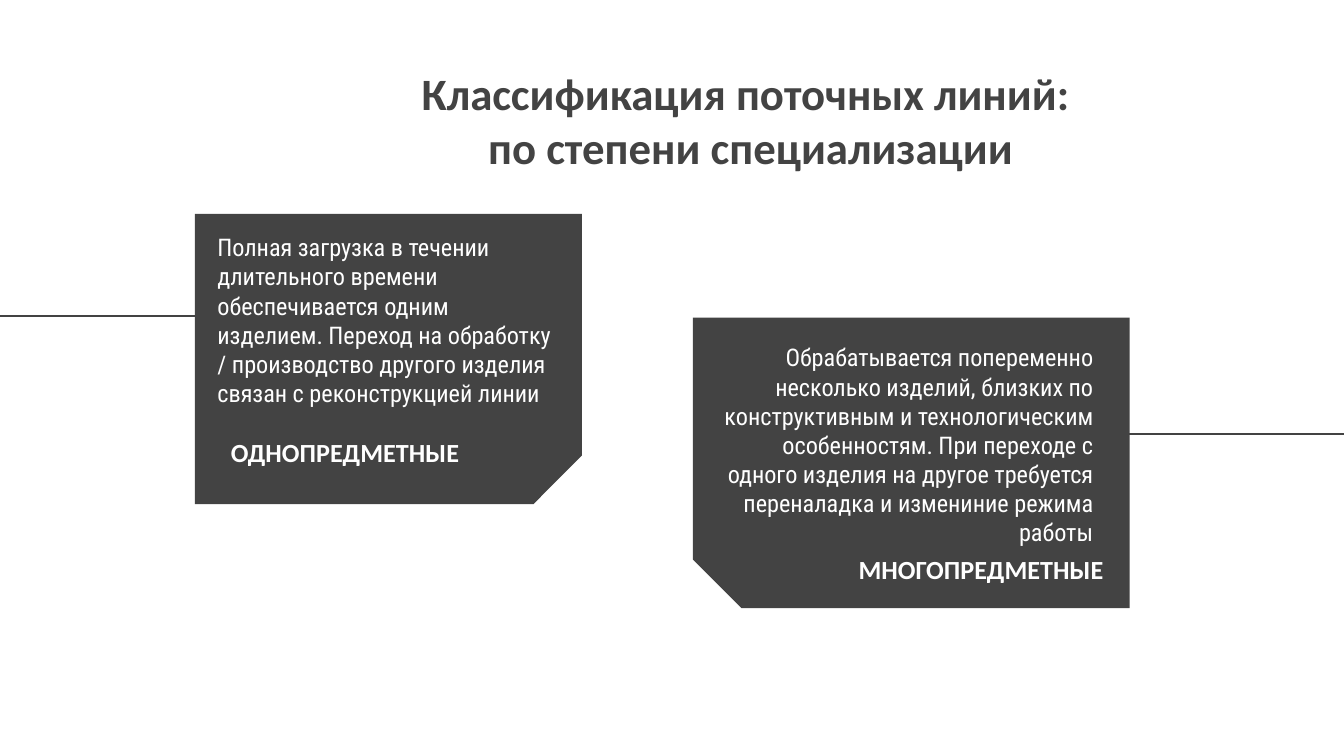
from dataclasses import dataclass

from lxml.etree import SubElement
from pptx import Presentation
from pptx.dml.color import RGBColor
from pptx.enum.shapes import MSO_CONNECTOR, MSO_SHAPE
from pptx.enum.text import MSO_ANCHOR, MSO_AUTO_SIZE, PP_ALIGN
from pptx.oxml.ns import qn
from pptx.util import Pt

HUES = {"dark": "434343", "light": "FFFFFF"}
Box = tuple[float, float, float, float]


@dataclass
class Style:
    font: str
    size: float
    bold: bool
    hue: str
    anchor: MSO_ANCHOR


@dataclass
class Card:
    name: str
    text: str
    box: Box  # before the turn
    turn: int
    flip: bool
    line: tuple[float, float, float]  # x from, x to, y
    name_box: Box
    text_box: Box
    align: PP_ALIGN


HEAD = Style("Calibri", 24, True, "dark", MSO_ANCHOR.TOP)
NAME = Style("Calibri", 14, True, "light", MSO_ANCHOR.BOTTOM)
BODY = Style("Roboto Condensed", 13, False, "light", MSO_ANCHOR.TOP)

CARDS = [
    Card("МНОГОПРЕДМЕТНЫЕ",
         "Обрабатывается попеременно несколько изделий, близких по "
         "конструктивным и технологическим особенностям. При переходе с одного "
         "изделия на другое требуется переналадка и измениние режима работы",
         (410.4, 131, 155.5, 234), 270, True, (730, 526.3, 232.5),
         (416.9, 286.6, 181.4, 33.8), (377.3, 176.4, 215.3, 79.2),
         PP_ALIGN.RIGHT),
    Card("ОДНОПРЕДМЕТНЫЕ",
         "Полная загрузка в течении длительного времени обеспечивается одним "
         "изделием. Переход на обработку / производство другого изделия связан "
         "с реконструкцией линии",
         (130.3, 88.6, 155.5, 207.4), 90, False, (190.8, -1.4, 169.2),
         (116.6, 223.9, 169.9, 33.8), (109.4, 117.4, 193.7, 79.2),
         PP_ALIGN.LEFT),
]


def color(hue: str) -> RGBColor:
    return RGBColor.from_string(HUES[hue])


def write(shape, text: str, style: Style, align: PP_ALIGN) -> None:
    frame = shape.text_frame
    frame.text = text
    frame.word_wrap = True
    frame.auto_size = MSO_AUTO_SIZE.NONE
    frame.vertical_anchor = style.anchor
    frame.margin_left = frame.margin_right = Pt(7.2)
    frame.margin_top = frame.margin_bottom = Pt(7.2)
    for para in frame.paragraphs:
        para.alignment = align
        for run in para.runs:
            run.font.name = style.font
            run.font.size = Pt(style.size)
            run.font.bold = style.bold
            run.font.color.rgb = color(style.hue)


def label(slide, box: Box, text: str, style: Style, align: PP_ALIGN) -> None:
    write(slide.shapes.add_textbox(*map(Pt, box)), text, style, align)


def draw(slide, card: Card) -> None:
    # Panel with one cut corner
    panel = slide.shapes.add_shape(MSO_SHAPE.SNIP_1_RECTANGLE, *map(Pt, card.box))
    panel.adjustments[0] = 0.167
    panel.rotation = card.turn
    if card.flip:
        panel._element.spPr.find(qn("a:xfrm")).set("flipH", "1")
    panel.shadow.inherit = False
    panel.fill.solid()
    panel.fill.fore_color.rgb = color("dark")
    panel.line.fill.background()

    # Line to the slide edge
    start, end, y = card.line
    rule = slide.shapes.add_connector(
        MSO_CONNECTOR.STRAIGHT, Pt(start), Pt(y), Pt(end), Pt(y))
    rule.line.color.rgb = color("dark")
    rule.line.width = Pt(0.75)
    SubElement(rule._element.spPr, qn("a:effectLst"))

    # Texts
    label(slide, card.name_box, card.name, NAME, card.align)
    label(slide, card.text_box, card.text, BODY, card.align)


def main() -> None:
    deck = Presentation()
    deck.slide_width, deck.slide_height = Pt(720), Pt(405)
    slide = deck.slides.add_slide(deck.slide_layouts[5])

    # Title
    title = slide.shapes.title
    title.left, title.top, title.width, title.height = map(
        Pt, (154.8, 28.1, 494.6, 74.2))
    write(title, "Классификация поточных линий: \vпо степени специализации",
          HEAD, PP_ALIGN.CENTER)

    # Cards
    for card in CARDS:
        draw(slide, card)
    deck.save("out.pptx")


if __name__ == "__main__":
    main()
